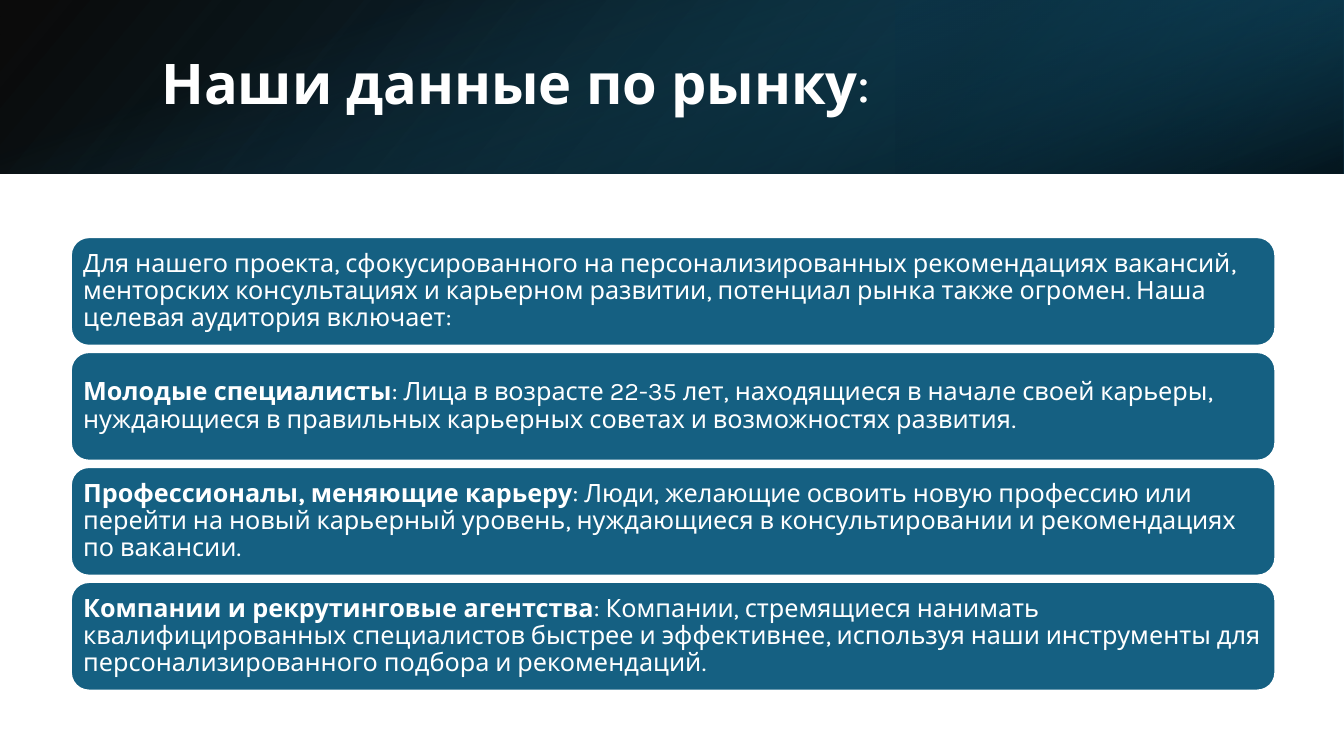
from pptx import Presentation
from pptx.dml.color import RGBColor
from pptx.enum.shapes import MSO_SHAPE
from pptx.enum.text import MSO_ANCHOR, MSO_AUTO_SIZE, PP_ALIGN
from pptx.oxml.ns import qn
from pptx.util import Pt
from lxml import etree

RECT, ROUND = MSO_SHAPE.RECTANGLE, MSO_SHAPE.ROUNDED_RECTANGLE
MIDDLE, LEFT = MSO_ANCHOR.MIDDLE, PP_ALIGN.LEFT
NO_FIT = MSO_AUTO_SIZE.NONE

# Each text is a pair: bold lead, plain rest
TITLE = ("Наши данные по рынку", ":")
CARDS = [
    ("", "Для нашего проекта, сфокусированного на персонализированных "
     "рекомендациях вакансий, менторских консультациях и карьерном развитии, "
     "потенциал рынка также огромен. Наша целевая аудитория включает:"),
    ("Молодые специалисты",
     ": Лица в возрасте 22-35 лет, находящиеся в начале своей карьеры, "
     "нуждающиеся в правильных карьерных советах и возможностях развития."),
    ("Профессионалы, меняющие карьеру",
     ": Люди, желающие освоить новую профессию или перейти на новый карьерный "
     "уровень, нуждающиеся в консультировании и рекомендациях по вакансии."),
    ("Компании и рекрутинговые агентства",
     ": Компании, стремящиеся нанимать квалифицированных специалистов быстрее "
     "и эффективнее, используя наши инструменты для персонализированного "
     "подбора и рекомендаций."),
]

THEME = {
    "font": "Karla", "title": 40, "body": 18,
    "white": "FFFFFF", "teal": "156082", "deep": "104862",
    "night": "0B3041", "black": "000000",
}

WIDE, HIGH = 960, 540
BAND = 124
# Left edge, clockwise angle, stops of (position %, colour, opacity %)
LAYERS = [
    (0, 40, [(0, "black", 96), (100, "deep", 100)]),
    (640, 40, [(19, "night", 68), (100, "teal", 79)]),
    (0, 70, [(23, "teal", 0), (99, "black", 74)]),
]
CARD_X, CARD_Y, CARD_W, CARD_H = 50.6, 169.4, 860.4, 77.6
GAP = 4.5


def color(name):
    return RGBColor.from_string(THEME[name])


def add_box(slide, kind, x, y, w, h):
    box = slide.shapes.add_shape(kind, Pt(x), Pt(y), Pt(w), Pt(h))
    box.shadow.inherit = False
    return box


def add_layer(slide, x, angle, stops):
    """Lay a translucent gradient over the band, from x to the right edge."""
    box = add_box(slide, RECT, x, 0, WIDE - x, BAND)
    box.line.fill.background()
    box.fill.gradient()
    box.fill.gradient_angle = 360 - angle
    for stop, (place, name, _) in zip(box.fill.gradient_stops, stops):
        stop.position = place / 100
        stop.color.rgb = color(name)
    tones = box._element.spPr.iter(qn("a:srgbClr"))
    for tone, (_, _, alpha) in zip(list(tones), stops):
        etree.SubElement(tone, qn("a:alpha"), val=str(alpha * 1000))


def write(frame, text, size, inset):
    """Fill a frame with one paragraph: a bold lead, then plain text."""
    frame.word_wrap = True
    frame.auto_size = NO_FIT
    frame.vertical_anchor = MIDDLE
    frame.margin_left = frame.margin_right = Pt(inset)
    frame.margin_top = frame.margin_bottom = Pt(min(inset, 5))
    para = frame.paragraphs[0]
    para.alignment = LEFT
    para.line_spacing = 0.9
    for part, bold in zip(text, (True, False)):
        if part:
            run = para.add_run()
            run.text = part
            run.font.name = THEME["font"]
            run.font.size = Pt(size)
            run.font.bold = bold
            run.font.color.rgb = color("white")


def add_card(slide, row, text):
    y = CARD_Y + row * (CARD_H + GAP)
    card = add_box(slide, ROUND, CARD_X, y, CARD_W, CARD_H)
    card.fill.solid()
    card.fill.fore_color.rgb = color("teal")
    card.line.color.rgb = color("white")
    card.line.width = Pt(1.5)
    write(card.text_frame, text, THEME["body"], inset=5)


def main():
    deck = Presentation()
    deck.slide_width, deck.slide_height = Pt(WIDE), Pt(HIGH)
    slide = deck.slides.add_slide(deck.slide_layouts[5])
    for layer in LAYERS:
        add_layer(slide, *layer)

    title = slide.shapes.title
    title.left, title.top = Pt(108), Pt(27.4)
    title.width, title.height = Pt(790.6), Pt(69)
    write(title.text_frame, TITLE, THEME["title"], inset=7.2)
    # Bring the title in front of the band
    slide.shapes._spTree.append(title._element)

    for row, text in enumerate(CARDS):
        add_card(slide, row, text)
    deck.save("out.pptx")


if __name__ == "__main__":
    main()
